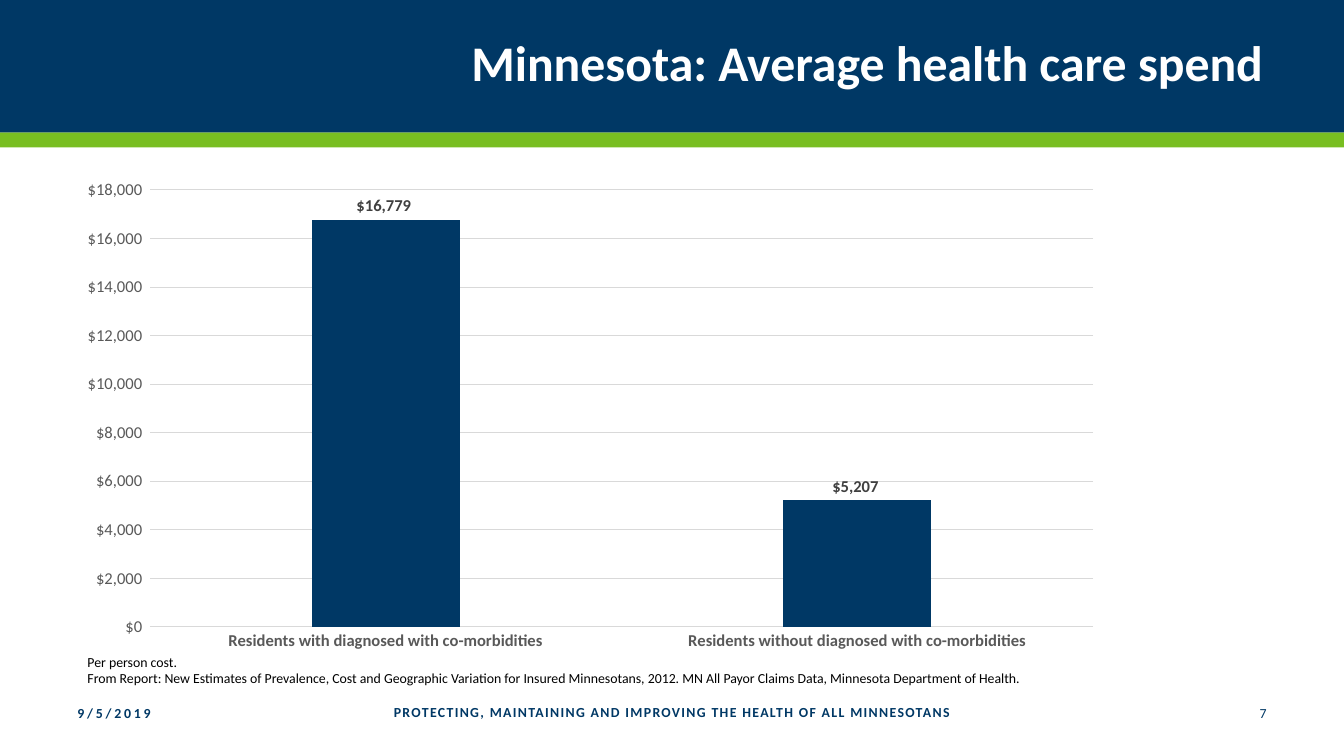
"""Build a slide comparing average health care spend in Minnesota."""
from pptx import Presentation
from pptx.chart.data import CategoryChartData
from pptx.dml.color import RGBColor
from pptx.enum.chart import XL_CHART_TYPE, XL_LABEL_POSITION, XL_TICK_MARK
from pptx.enum.shapes import MSO_SHAPE
from pptx.enum.text import MSO_ANCHOR, PP_ALIGN
from pptx.util import Inches, Pt

RECT = MSO_SHAPE.RECTANGLE
COLUMN = XL_CHART_TYPE.COLUMN_CLUSTERED
ABOVE = XL_LABEL_POSITION.OUTSIDE_END
NO_TICK = XL_TICK_MARK.NONE
TOP, MIDDLE = MSO_ANCHOR.TOP, MSO_ANCHOR.MIDDLE
LEFT, CENTER, RIGHT = PP_ALIGN.LEFT, PP_ALIGN.CENTER, PP_ALIGN.RIGHT

THEME = {
    "font": "Calibri",
    "navy": RGBColor.from_string("003865"),
    "green": RGBColor.from_string("78BE21"),
    "white": RGBColor.from_string("FFFFFF"),
    "black": RGBColor.from_string("000000"),
    "gray": RGBColor.from_string("595959"),
    "dark": RGBColor.from_string("404040"),
    "rule": RGBColor.from_string("D9D9D9"),
    "title": 36,
    "label": 12,
    "small": 10,
}
MONEY = '"$"#,##0_);[Red]\\("$"#,##0\\)'

deck = Presentation()
deck.slide_width, deck.slide_height = Inches(13.5), Inches(7.5)
COL, ROW = deck.slide_width / 54, deck.slide_height / 30
slide = deck.slides.add_slide(deck.slide_layouts[6])
shapes = slide.shapes


def grid(x, y, wide, high):
    return [round(n) for n in (x * COL, y * ROW, wide * COL, high * ROW)]


def style(font, size, color, bold=False):
    font.name = THEME["font"]
    font.size = Pt(THEME[size])
    font.bold = bold
    font.color.rgb = THEME[color]


for color, y, high in (("green", 5.32, 0.6), ("navy", 0, 5.32)):
    band = shapes.add_shape(RECT, *grid(0, y, 54, high))
    band.shadow.inherit = False
    band.fill.solid()
    band.fill.fore_color.rgb = THEME[color]
    band.line.fill.background()

data = CategoryChartData(number_format=MONEY)
data.categories = [
    "Residents with diagnosed with co-morbidities",
    "Residents without diagnosed with co-morbidities",
]
data.add_series("Series 1", (16779, 5207))
chart = shapes.add_chart(COLUMN, *grid(2.68, 6.84, 42.08, 19.68), data).chart
style(chart.font, "small", "black")
chart.has_title = False
chart.has_legend = False

for axis, bold in ((chart.category_axis, True), (chart.value_axis, False)):
    axis.major_tick_mark = axis.minor_tick_mark = NO_TICK
    style(axis.tick_labels.font, "label", "gray", bold)

spend = chart.value_axis
spend.minimum_scale, spend.maximum_scale, spend.major_unit = 0, 18000, 2000
spend.tick_labels.number_format = MONEY
spend.tick_labels.number_format_is_linked = False
spend.format.line.fill.background()
spend.has_major_gridlines = True
for line in (chart.category_axis.format.line, spend.major_gridlines.format.line):
    line.color.rgb = THEME["rule"]
    line.width = Pt(0.75)

plot = chart.plots[0]
plot.vary_by_categories = False
plot.gap_width, plot.overlap = 219, -27
bars = plot.series[0]
bars.format.fill.solid()
bars.format.fill.fore_color.rgb = THEME["navy"]
labels = bars.data_labels
labels.show_value = True
labels.position = ABOVE
labels.number_format = MONEY
labels.number_format_is_linked = False
style(labels.font, "label", "dark", True)

TEXTS = [
    (grid(0, 0, 51.16, 5.28), MIDDLE, RIGHT, "title", "white", True, 0,
     ["Minnesota: Average health care spend"]),
    (grid(3.12, 26.04, 43.16, 1.76), TOP, LEFT, "small", "black", False, 0,
     ["Per person cost.",
      "From Report: New Estimates of Prevalence, Cost and Geographic Variation "
      "for Insured Minnesotans, 2012. MN All Payor Claims Data, "
      "Minnesota Department of Health."]),
    (grid(2.72, 27.84, 6.16, 1.6), MIDDLE, LEFT, "small", "navy", True, 2,
     ["9/5/2019"]),
    (grid(8.88, 27.8, 36.24, 1.6), MIDDLE, CENTER, "small", "navy", True, 1,
     ["PROTECTING, MAINTAINING AND IMPROVING THE HEALTH OF ALL MINNESOTANS"]),
    (grid(45.12, 27.84, 6.16, 1.6), MIDDLE, RIGHT, "small", "navy", False, 2,
     ["7"]),
]
for place, anchor, align, size, color, bold, gap, lines in TEXTS:
    frame = shapes.add_textbox(*place).text_frame
    frame.word_wrap = True
    frame.vertical_anchor = anchor
    for i, words in enumerate(lines):
        para = frame.add_paragraph() if i else frame.paragraphs[0]
        para.alignment = align
        if size == "title":
            para.line_spacing = 0.9
        run = para.add_run()
        run.text = words
        style(run.font, size, color, bold)
        if gap:
            run.font._element.set("spc", str(gap * 100))

deck.save("out.pptx")
